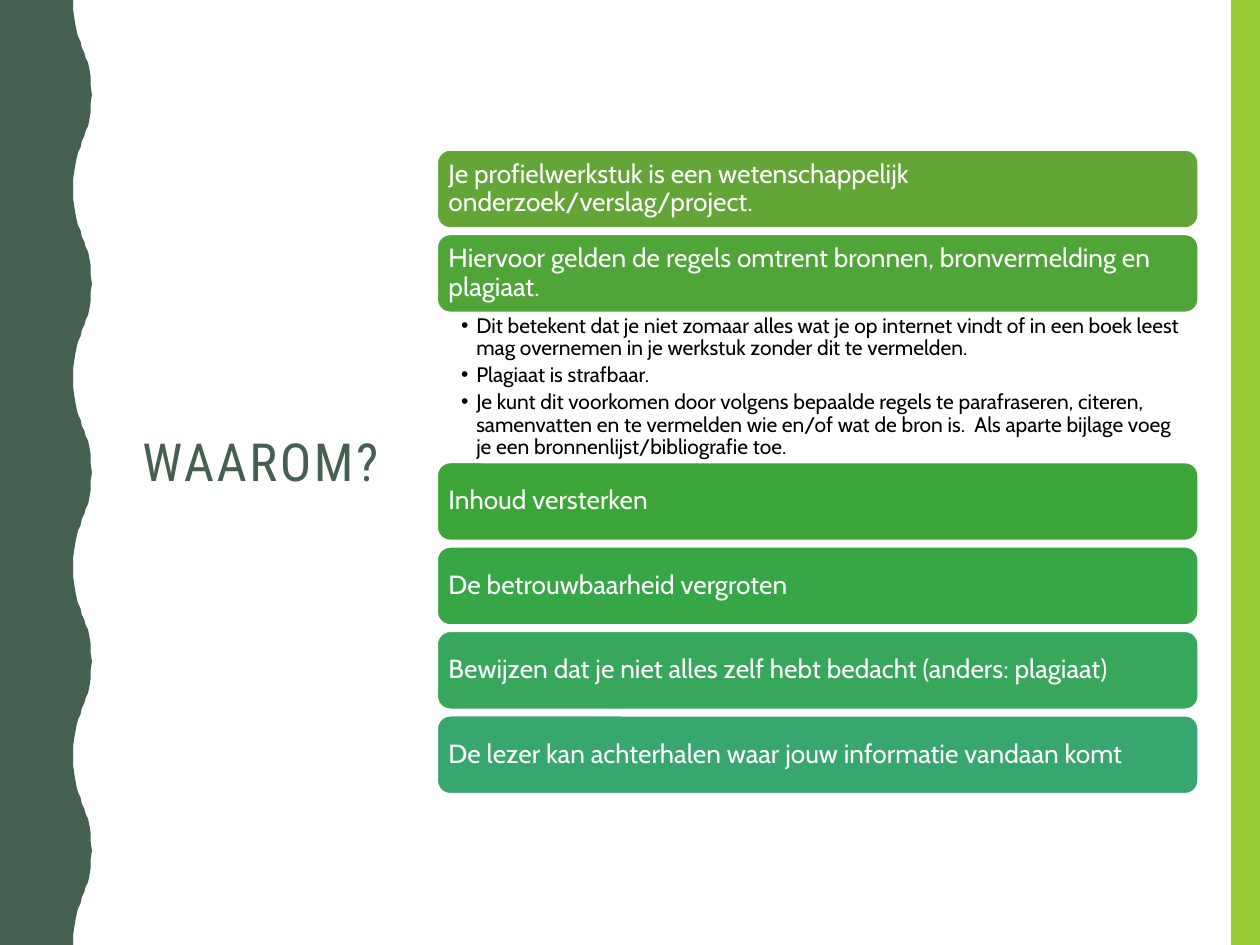
from lxml.etree import SubElement
from pptx import Presentation
from pptx.dml.color import RGBColor
from pptx.enum.shapes import MSO_SHAPE
from pptx.enum.text import MSO_ANCHOR, MSO_AUTO_SIZE, PP_ALIGN
from pptx.oxml.ns import qn
from pptx.util import Inches, Pt

COLUMNS, ROWS = 1000, 750  # grid cells are 0.01 inch square
BAR_LEFT, BAR_WIDTH, BAR_HEIGHT, BAR_PITCH = 347, 604, 62, 67

INTRO_BARS = [
    ("Je profielwerkstuk is een wetenschappelijk onderzoek/verslag/project.", "63A537"),
    ("Hiervoor gelden de regels omtrent bronnen, bronvermelding en plagiaat.", "4FA537"),
]
RULES = [
    "Dit betekent dat je niet zomaar alles wat je op internet vindt of in een boek "
    "leest mag overnemen in je werkstuk zonder dit te vermelden.",
    "Plagiaat is strafbaar.",
    "Je kunt dit voorkomen door volgens bepaalde regels te parafraseren, citeren, "
    "samenvatten en te vermelden wie en/of wat de bron is.  Als aparte bijlage voeg "
    "je een bronnenlijst/bibliografie toe.",
]
REASON_BARS = [
    ("Inhoud versterken", "3BA637"),
    ("De betrouwbaarheid vergroten", "37A647"),
    ("Bewijzen dat je niet alles zelf hebt bedacht (anders: plagiaat)", "37A75B"),
    ("De lezer kan achterhalen waar jouw informatie vandaan komt", "37A76F"),
]


def color(hex_string):
    return RGBColor.from_string(hex_string)


def cells(count):
    return Inches(count / 100)


def wave_points():
    """Points down the wavy edge: one half swell, mirrored and repeated."""
    period = 150
    swell = [(58, 0), (58, 7), (59, 14), (60, 20), (61, 25), (62, 29), (64, 33),
             (65, 38), (67, 42), (68, 46), (70, 50), (71, 55), (72, 61), (72, 68)]
    full = swell + [(73, 75)] + [(x, period - y) for x, y in reversed(swell)]
    return [(x, y + start) for start in range(0, ROWS, period) for x, y in full]


class SlideBuilder:
    heading_font, body_font = "Roboto Condensed", "Cabin"
    dark, lime, white, black = "455F51", "99CB38", "FFFFFF", "000000"

    def __init__(self, slide):
        self.slide = slide

    def place(self, shape, left, top, width, height):
        shape.left, shape.top = cells(left), cells(top)
        shape.width, shape.height = cells(width), cells(height)

    def paint(self, shape, fill, line=None):
        shape.shadow.inherit = False
        shape.fill.solid()
        shape.fill.fore_color.rgb = color(fill)
        if line:
            shape.line.color.rgb = color(line)
            shape.line.width = Pt(1)
        else:
            shape.line.fill.background()

    def set_frame(self, frame, anchor, margins):
        frame.word_wrap = True
        frame.auto_size = MSO_AUTO_SIZE.NONE
        frame.vertical_anchor = anchor
        (frame.margin_left, frame.margin_top,
         frame.margin_right, frame.margin_bottom) = map(cells, margins)

    def add_text(self, paragraph, text, font, size, hex_string):
        paragraph.alignment = PP_ALIGN.LEFT
        paragraph.line_spacing = 0.9
        paragraph.space_before = Pt(0)
        run = paragraph.add_run()
        run.text = text
        run.font.name, run.font.size = font, Pt(size)
        run.font.color.rgb = color(hex_string)
        return run

    def wave(self):
        builder = self.slide.shapes.build_freeform(0, 0, scale=cells(1))
        builder.add_line_segments(wave_points() + [(0, ROWS)], close=True)
        self.paint(builder.convert_to_shape(), self.dark)

    def side_band(self, width):
        band = self.slide.shapes.add_shape(
            MSO_SHAPE.RECTANGLE, cells(COLUMNS - width), 0, cells(width), cells(ROWS))
        self.paint(band, self.lime)

    def title(self, text, *box):
        title = self.slide.shapes.title
        self.place(title, *box)
        self.set_frame(title.text_frame, MSO_ANCHOR.MIDDLE, (10, 5, 10, 5))
        run = self.add_text(title.text_frame.paragraphs[0], text,
                            self.heading_font, 30, self.dark)
        run._r.get_or_add_rPr().set("spc", "150")

    def bullets(self, items, *box):
        body = self.slide.placeholders[1]
        self.place(body, *box)
        frame = body.text_frame
        self.set_frame(frame, MSO_ANCHOR.TOP, (19, 2, 12, 2))
        for index, item in enumerate(items):
            paragraph = frame.add_paragraph() if index else frame.paragraphs[0]
            self.add_text(paragraph, item, self.body_font, 12, self.black)
            paragraph.space_after = Pt(2.4)
            properties = paragraph._p.get_or_add_pPr()
            properties.set("marL", str(cells(12)))
            properties.set("indent", str(-cells(12)))
            SubElement(properties, qn("a:buChar"), char="•")

    def bars(self, items, first_top):
        for index, (text, fill) in enumerate(items):
            bar = self.slide.shapes.add_shape(
                MSO_SHAPE.ROUNDED_RECTANGLE, cells(BAR_LEFT),
                cells(first_top + index * BAR_PITCH), cells(BAR_WIDTH), cells(BAR_HEIGHT))
            self.paint(bar, fill, self.white)
            self.set_frame(bar.text_frame, MSO_ANCHOR.MIDDLE, (6, 6, 6, 6))
            self.add_text(bar.text_frame.paragraphs[0], text,
                          self.body_font, 15, self.white)


def main():
    presentation = Presentation()
    presentation.slide_width, presentation.slide_height = cells(COLUMNS), cells(ROWS)
    builder = SlideBuilder(presentation.slides.add_slide(presentation.slide_layouts[1]))
    builder.wave()
    builder.side_band(23)
    builder.title("WAAROM?", 103, 147, 278, 444)
    builder.bars(INTRO_BARS, 119)
    builder.bullets(RULES, BAR_LEFT, 248, BAR_WIDTH, 119)
    builder.bars(REASON_BARS, 367)
    presentation.save("out.pptx")


if __name__ == "__main__":
    main()
